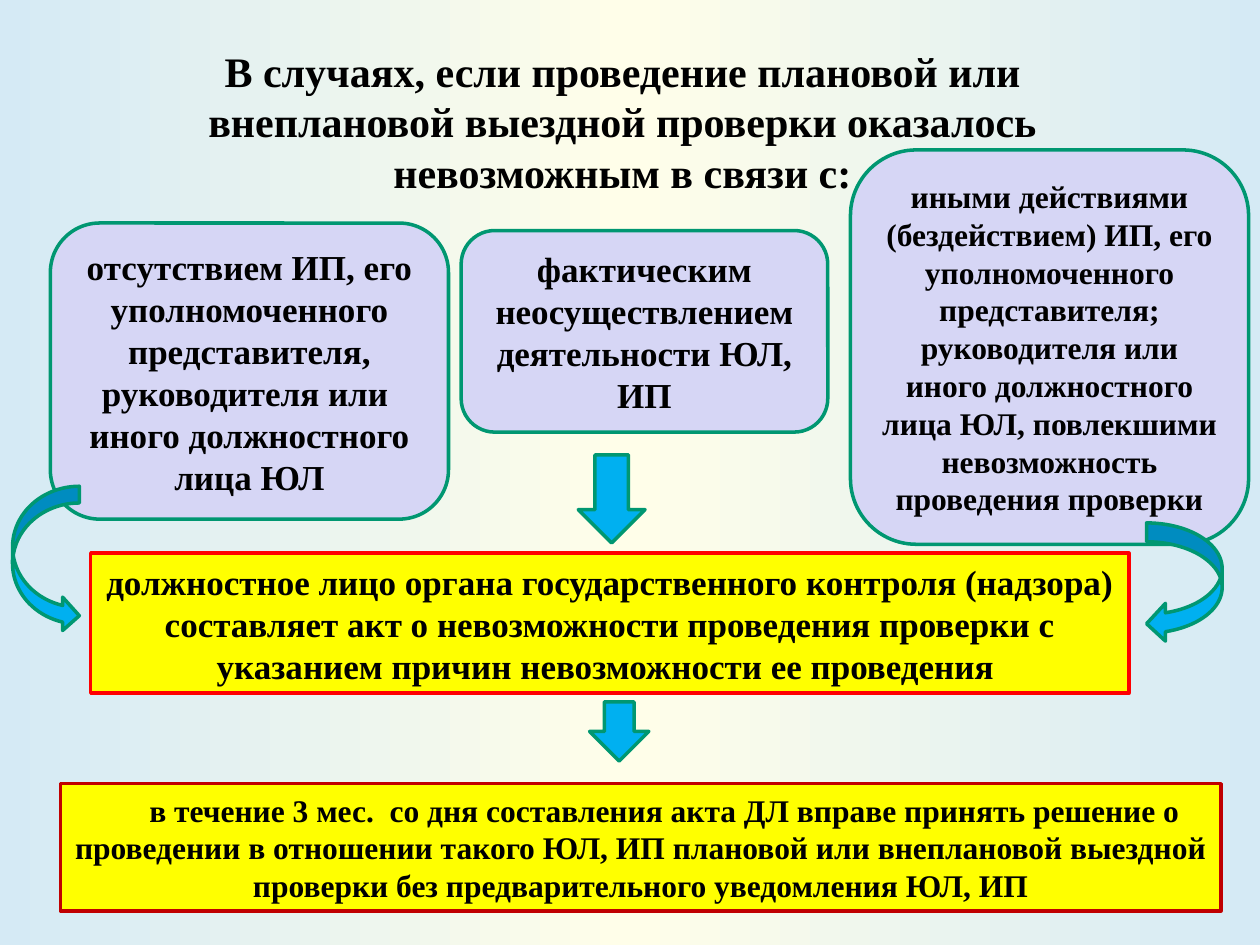
from copy import deepcopy
from dataclasses import dataclass

from pptx import Presentation
from pptx.dml.color import RGBColor as Color
from pptx.enum.shapes import MSO_SHAPE as Shape
from pptx.enum.text import MSO_ANCHOR as Anchor, MSO_AUTO_SIZE as AutoSize, PP_ALIGN as Align
from pptx.util import Inches, Pt


@dataclass(frozen=True)
class Theme:
    font: str = "Times New Roman"
    ink: str = "000000"
    edge: str = "D5EAF5"
    center: str = "FFFEE9"
    cause: str = "D6D6F5"
    outline: str = "009771"
    result: str = "FFFF00"
    act_line: str = "FF0000"
    decision_line: str = "C00000"
    arrow: str = "00B0F0"
    title_size: int = 24
    large: int = 20
    small: int = 18
    line: int = 2


theme = Theme()
COLUMNS, ROWS = 100, 75

deck = Presentation()
deck.slide_width, deck.slide_height = Inches(10), Inches(7.5)
column, row = deck.slide_width / COLUMNS, deck.slide_height / ROWS
page = deck.slides.add_slide(deck.slide_layouts[5])


def write(box, text, size, anchor=Anchor.MIDDLE):
    frame = box.text_frame
    frame.text = text
    frame.word_wrap = True
    frame.vertical_anchor = anchor
    frame.auto_size = AutoSize.SHAPE_TO_FIT_TEXT
    for para in frame.paragraphs:
        para.alignment = Align.CENTER
        for span in para.runs:
            span.font.name, span.font.size, span.font.bold = theme.font, Pt(size), True
            span.font.color.rgb = Color.from_string(theme.ink)


def add_box(kind, place, fill, line):
    """Add a filled, outlined shape; place is left, top, width, height in grid units."""
    left, top, width, height = place
    box = page.shapes.add_shape(kind, int(left * column), int(top * row),
                                int(width * column), int(height * row))
    box.shadow.inherit = False
    box.fill.solid()
    box.fill.fore_color.rgb = Color.from_string(fill)
    box.line.color.rgb = Color.from_string(line)
    box.line.width = Pt(theme.line)
    return box


# Background: pale blue edges around a cream middle
backdrop = page.background.fill
backdrop.gradient()
backdrop.gradient_angle = 0
first_stop = backdrop.gradient_stops[0]
stop_list = page.background.fill._fill._gradFill.gsLst
stop_list.insert(1, deepcopy(stop_list[0]))
for stop, position, color in zip(backdrop.gradient_stops, (0, 0.5, 1),
                                 (theme.edge, theme.center, theme.edge)):
    stop.position = position
    stop.color.rgb = Color.from_string(color)

# Title
title = page.shapes.title
title.left, title.top = int(2.8 * column), int(3.1 * row)
title.width, title.height = int(88.2 * column), int(13.1 * row)
write(title, "В случаях, если проведение плановой или внеплановой выездной проверки "
             "оказалось невозможным в связи с:", theme.title_size, Anchor.TOP)
title.text_frame.paragraphs[0]._p.get_or_add_pPr().set("marL", str(Inches(0.5)))

# Causes
causes = [
    ((4, 17.7, 31.6, 23.5), theme.large,
     "отсутствием ИП, его уполномоченного представителя, руководителя или \n"
     "иного должностного лица ЮЛ"),
    ((36.6, 18.3, 29.1, 16), theme.large,
     "фактическим неосуществлением деятельности ЮЛ, ИП"),
    ((67.5, 11.9, 31.6, 31.3), theme.small,
     "иными действиями (бездействием) ИП, его уполномоченного представителя; "
     "руководителя или иного должностного лица ЮЛ, повлекшими невозможность "
     "проведения проверки"),
]
for place, size, text in causes:
    cause = add_box(Shape.FLOWCHART_ALTERNATE_PROCESS, place, theme.cause, theme.outline)
    write(cause, text, size)

# Act drawn up by the official
act = add_box(Shape.FLOWCHART_PROCESS, (7.2, 43.9, 82.4, 11.1), theme.result, theme.act_line)
write(act, "должностное лицо органа государственного контроля (надзора) составляет акт "
           "о невозможности проведения проверки с указанием причин невозможности "
           "ее проведения ", theme.large)

# Arrows
arrows = [
    (Shape.CURVED_RIGHT_ARROW, (1, 38.6, 5.3, 11.6)),
    (Shape.DOWN_ARROW, (45.9, 36.1, 5.3, 7)),
    (Shape.CURVED_LEFT_ARROW, (91, 41.5, 6, 9.5)),
    (Shape.DOWN_ARROW, (46.8, 55.7, 4.7, 4.7)),
]
for kind, place in arrows:
    add_box(kind, place, theme.arrow, theme.outline)

# Decision that follows
decision = add_box(Shape.FLOWCHART_PROCESS, (4.8, 62.2, 92.1, 10.1),
                   theme.result, theme.decision_line)
write(decision, "в течение 3 мес.  со дня составления акта ДЛ вправе принять решение о "
                "проведении в отношении такого ЮЛ, ИП плановой или внеплановой выездной "
                "проверки без предварительного уведомления ЮЛ, ИП", theme.small)
decision.text_frame.paragraphs[0]._p.get_or_add_pPr().set("indent", str(Inches(0.38)))

deck.save("out.pptx")
